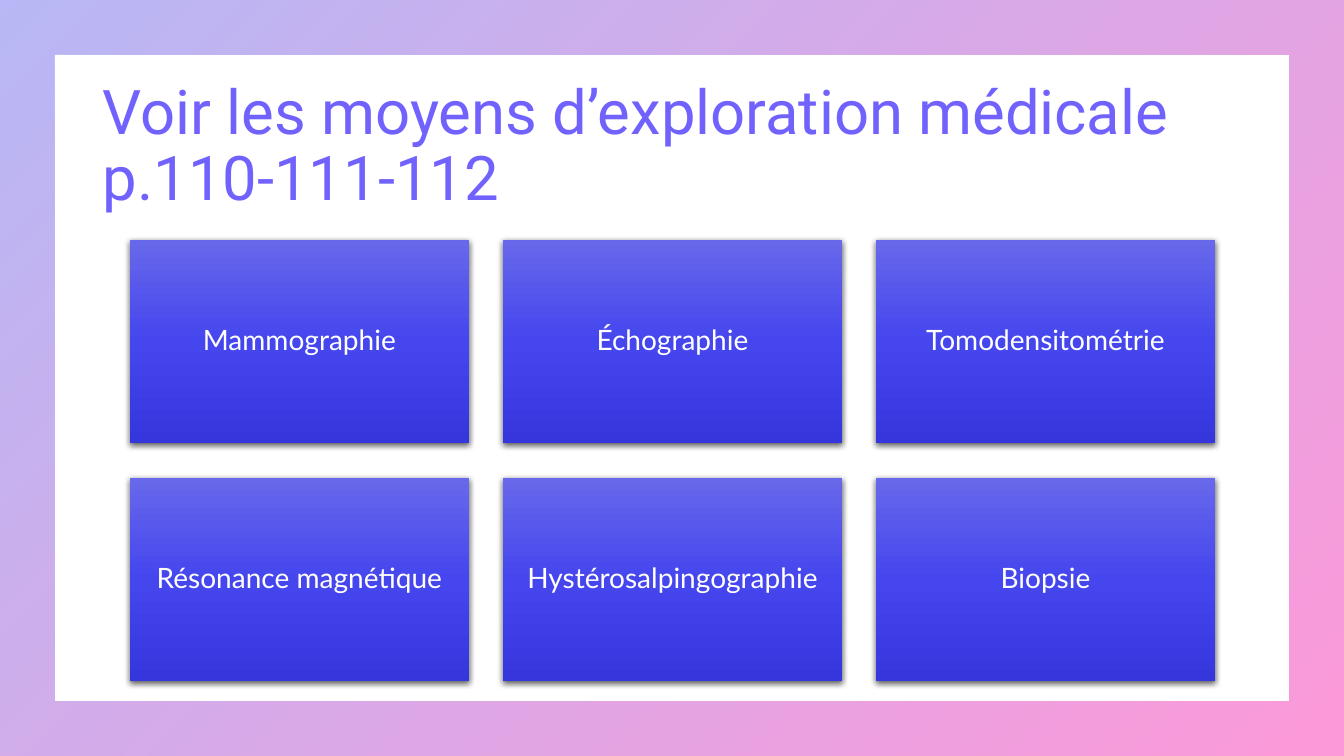
from lxml import etree
from pptx import Presentation
from pptx.dml.color import RGBColor
from pptx.enum.shapes import MSO_SHAPE
from pptx.enum.text import MSO_ANCHOR, PP_ALIGN
from pptx.oxml import parse_xml
from pptx.oxml.ns import nsdecls
from pptx.util import Inches, Pt

FRAME, RECTANGLE = MSO_SHAPE.FRAME, MSO_SHAPE.RECTANGLE
MIDDLE = MSO_ANCHOR.MIDDLE
LEFT, CENTER = PP_ALIGN.LEFT, PP_ALIGN.CENTER

THEME = {
    "frame": [(0, "4D4EE6", 40), (100, "F900A0", 40)],
    "card": [(0, "6768EA", 100), (50, "4546EE", 100), (100, "3536DC", 100)],
    "shadow": "000000",
    "title": ("Roboto", 44, "7162FE"),
    "label": ("Lato", 20, "FFFFFF"),
}


def fill_gradient(shape, stops, angle):
    shape.shadow.inherit = False
    shape.line.fill.background()
    shape.fill.background()
    stop_xml = "".join(
        f'<a:gs pos="{position * 1000}"><a:srgbClr val="{color}">'
        f'<a:alpha val="{opacity * 1000}"/></a:srgbClr></a:gs>'
        for position, color, opacity in stops
    )
    properties = shape._element.spPr
    gradient = parse_xml(
        f'<a:gradFill {nsdecls("a")} rotWithShape="1"><a:gsLst>{stop_xml}</a:gsLst>'
        f'<a:lin ang="{angle * 60000}" scaled="0"/></a:gradFill>'
    )
    properties.replace(properties.find("{*}noFill"), gradient)


def write_text(shape, text, style, alignment):
    font_name, size, color = style
    text_frame = shape.text_frame
    text_frame.word_wrap = True
    text_frame.vertical_anchor = MIDDLE
    paragraph = text_frame.paragraphs[0]
    paragraph.alignment = alignment
    paragraph.line_spacing = 0.9
    run = paragraph.add_run()
    run.text = text
    run.font.name = font_name
    run.font.size = Pt(size)
    run.font.color.rgb = RGBColor.from_string(color)
    return text_frame


presentation = Presentation()
presentation.slide_width = Inches(13.33)
presentation.slide_height = Inches(7.5)
slide = presentation.slides.add_slide(presentation.slide_layouts[6])

border = slide.shapes.add_shape(
    FRAME, 0, 0, presentation.slide_width, presentation.slide_height
)
border.adjustments[0] = 0.072
fill_gradient(border, THEME["frame"], 45)

title = slide.shapes.add_textbox(Inches(0.92), Inches(0.74), Inches(11.5), Inches(1.45))
write_text(
    title,
    "Voir les moyens d’exploration médicale p.110-111-112",
    THEME["title"],
    LEFT,
)

exams = [
    "Mammographie", "Échographie", "Tomodensitométrie",
    "Résonance magnétique", "Hystérosalpingographie", "Biopsie",
]
columns = 3
grid_left, grid_top = 1.29, 2.38
card_width, card_height = 3.36, 2.02
gap = 0.34

for index, exam in enumerate(exams):
    row, column = divmod(index, columns)
    card = slide.shapes.add_shape(
        RECTANGLE,
        Inches(grid_left + column * (card_width + gap)),
        Inches(grid_top + row * (card_height + gap)),
        Inches(card_width),
        Inches(card_height),
    )
    fill_gradient(card, THEME["card"], 90)
    effects = card._element.spPr.find("{*}effectLst")
    namespace = etree.QName(effects).namespace
    shadow = etree.SubElement(
        effects, f"{{{namespace}}}outerShdw",
        blurRad=str(Pt(4.5)), dist=str(Pt(1.5)), dir="5400000",
        algn="ctr", rotWithShape="0",
    )
    shadow_color = etree.SubElement(
        shadow, f"{{{namespace}}}srgbClr", val=THEME["shadow"]
    )
    etree.SubElement(shadow_color, f"{{{namespace}}}alpha", val="63000")
    text_frame = write_text(card, exam, THEME["label"], CENTER)
    text_frame.margin_left = text_frame.margin_right = Inches(0.08)
    text_frame.margin_top = text_frame.margin_bottom = Inches(0.08)

presentation.save("out.pptx")
